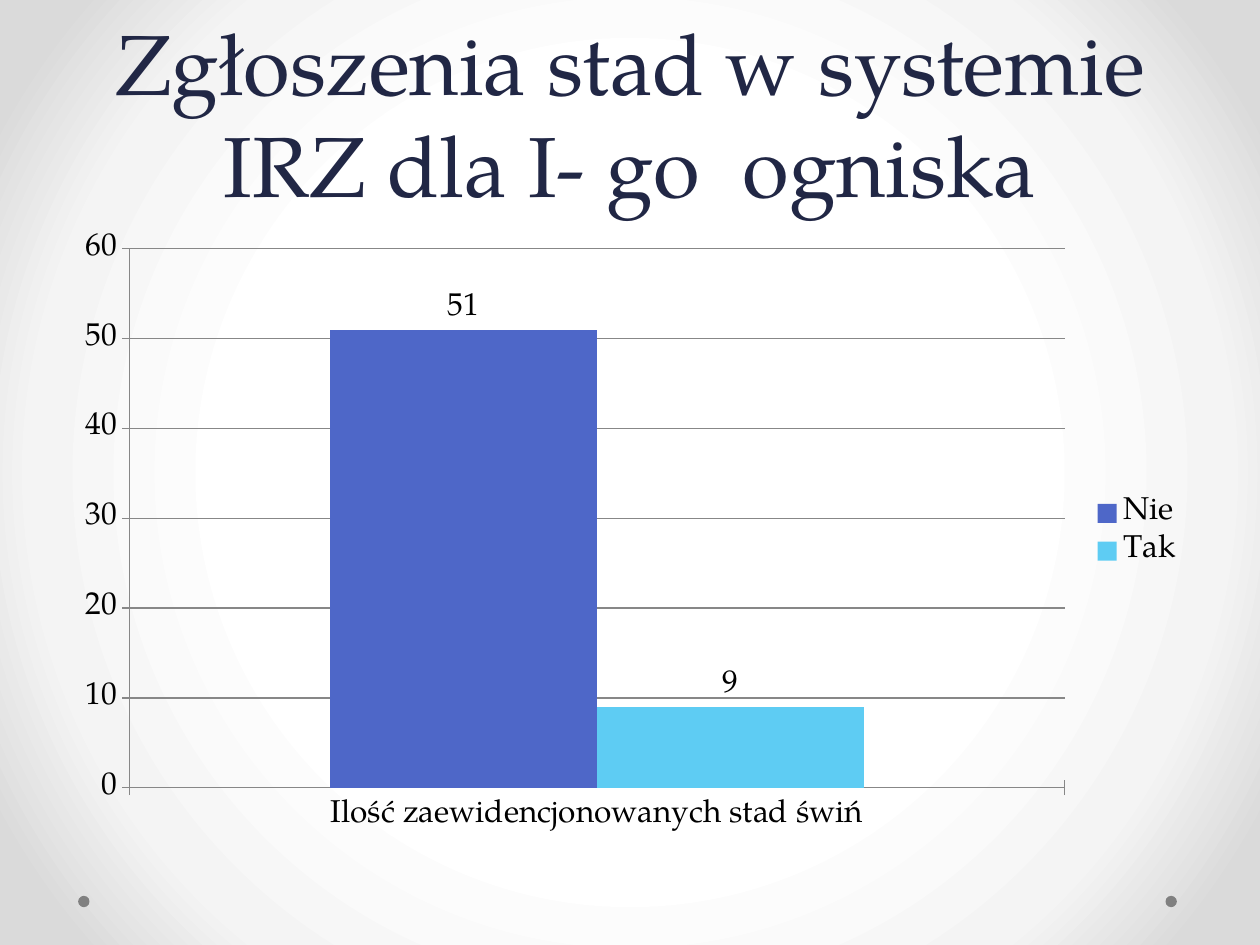
import lxml.etree
import pptx
import pptx.chart.data
import pptx.dml.color
import pptx.enum.chart
import pptx.enum.shapes
import pptx.enum.text
import pptx.oxml
import pptx.util

THEME = {
    "font": "TeX Gyre Pagella",
    "title_size": 48.6,
    "title_spacing": 58,
    "chart_size": 18,
    "title": "212745",
    "text": "000000",
    "dot": "808080",
    "axis": "878787",
    "Nie": "4E67C8",
    "Tak": "5ECCF3",
    "background": [(50, "FFFFFF"), (76, "F4F4F4"), (92, "DADADA")],
}


def color(name):
    return pptx.dml.color.RGBColor.from_string(THEME[name])


def style_font(font, size, color_name):
    font.name = THEME["font"]
    font.size = pptx.util.Pt(size)
    font.color.rgb = color(color_name)


deck = pptx.Presentation()
deck.slide_width = pptx.util.Inches(10)
deck.slide_height = pptx.util.Inches(7.5)
width, height = deck.slide_width, deck.slide_height
slide = deck.slides.add_slide(deck.slide_layouts[6])

# Content column shared by the title and the chart
left, column = int(width * 0.05), int(width * 0.9)
title_height = pptx.util.Inches(1.75)

# Circular background gradient
slide.background.fill.gradient()
gradient = slide.background.fill._fill._gradFill
stops = "".join(
    f'<a:gs pos="{share * 1000}"><a:srgbClr val="{tone}"/></a:gs>'
    for share, tone in THEME["background"]
)
circle = pptx.oxml.parse_xml(
    '<a:gradFill xmlns:a="http://schemas.openxmlformats.org/drawingml/2006/main"'
    f' rotWithShape="1"><a:gsLst>{stops}</a:gsLst><a:path path="circle">'
    '<a:fillToRect l="50000" t="50000" r="50000" b="50000"/></a:path></a:gradFill>'
)
gradient.getparent().replace(gradient, circle)

# Footer dots
diameter = pptx.util.Inches(0.09)
for share in (0.925, 0.062):
    dot = slide.shapes.add_shape(
        pptx.enum.shapes.MSO_SHAPE.OVAL,
        int(width * share), int(height * 0.948), diameter, diameter,
    )
    dot.shadow.inherit = False
    dot.fill.solid()
    dot.fill.fore_color.rgb = color("dot")
    dot.line.fill.background()

# Title
title = slide.shapes.add_textbox(left, 0, column, title_height).text_frame
title.word_wrap = True
title.vertical_anchor = pptx.enum.text.MSO_ANCHOR.BOTTOM
title.text = "Zgłoszenia stad w systemie IRZ dla I- go  ogniska"
heading = title.paragraphs[0]
heading.alignment = pptx.enum.text.PP_ALIGN.CENTER
heading.line_spacing = pptx.util.Pt(THEME["title_spacing"])
style_font(heading.runs[0].font, THEME["title_size"], "title")

# Herd chart
herds = pptx.chart.data.CategoryChartData()
herds.categories = ["Ilość zaewidencjonowanych stad świń"]
herds.add_series("Nie", [51])
herds.add_series("Tak", [9])
chart = slide.shapes.add_chart(
    pptx.enum.chart.XL_CHART_TYPE.COLUMN_CLUSTERED,
    left, title_height, column, int(height * 0.66), herds,
).chart
style_font(chart.font, THEME["chart_size"], "text")
chart.has_title = False
chart.has_legend = True
chart.legend.position = pptx.enum.chart.XL_LEGEND_POSITION.RIGHT
chart.legend.include_in_layout = False

# Columns and value labels
columns = chart.plots[0]
columns.gap_width = 150
columns.vary_by_categories = False
for answer in columns.series:
    answer.format.fill.solid()
    answer.format.fill.fore_color.rgb = color(answer.name)
    answer.data_labels.show_value = True
    answer.data_labels.position = pptx.enum.chart.XL_LABEL_POSITION.OUTSIDE_END

# Axes and gridlines
chart.value_axis.has_major_gridlines = True
for axis in (chart.category_axis, chart.value_axis):
    axis.major_tick_mark = pptx.enum.chart.XL_TICK_MARK.CROSS
    axis.format.line.color.rgb = color("axis")
chart.value_axis.major_gridlines.format.line.color.rgb = color("axis")

deck.save("out.pptx")
